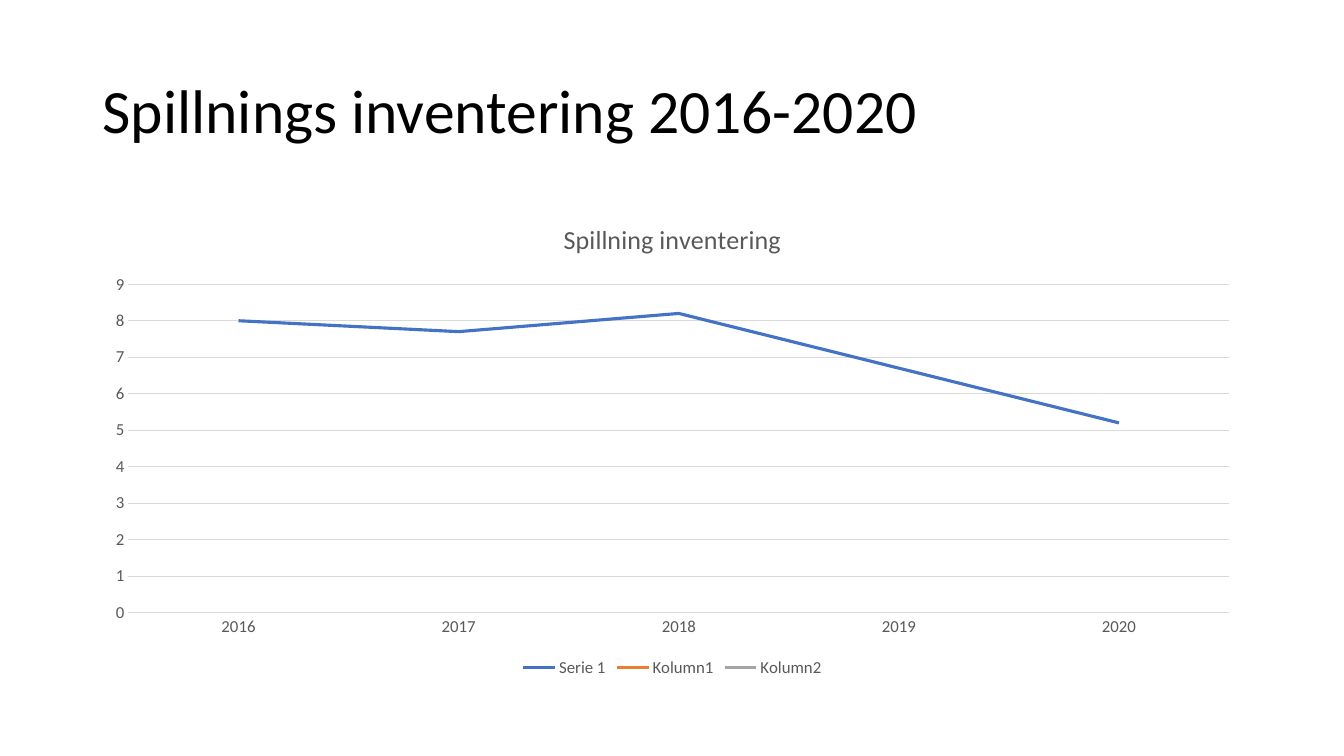
from pptx import Presentation
from pptx.chart.data import CategoryChartData
from pptx.dml.color import RGBColor
from pptx.enum.chart import XL_CHART_TYPE, XL_LEGEND_POSITION, XL_MARKER_STYLE, XL_TICK_MARK
from pptx.enum.text import MSO_ANCHOR
from pptx.util import Inches, Pt

LINE = XL_CHART_TYPE.LINE
BOTTOM = XL_LEGEND_POSITION.BOTTOM
NO_MARKER = XL_MARKER_STYLE.NONE
NO_TICK = XL_TICK_MARK.NONE
MIDDLE = MSO_ANCHOR.MIDDLE

FONT = "Calibri"
BLACK, GREY, GRID = "000000", "595959", "D9D9D9"
LEFT, WIDTH = 0.92, 11.5

YEARS = ["2016", "2017", "2018", "2019", "2020"]
SERIES = [
    ("Serie 1", [8, 7.7, 8.2, 6.7, 5.2], "4472C4"),
    ("Kolumn1", [None] * len(YEARS), "ED7D31"),
    ("Kolumn2", [None] * len(YEARS), "A5A5A5"),
]


def rgb(color):
    return RGBColor.from_string(color)


def style_font(font, size, color):
    for name, value in {"name": FONT, "size": Pt(size), "bold": False}.items():
        setattr(font, name, value)
    font.color.rgb = rgb(color)


def style_line(line, width, color):
    line.width = Pt(width)
    line.color.rgb = rgb(color)


def add_title(s, text, top, height):
    sp = s.shapes.add_textbox(Inches(LEFT), Inches(top), Inches(WIDTH), Inches(height))
    tf = sp.text_frame
    for name, value in {"word_wrap": True, "vertical_anchor": MIDDLE}.items():
        setattr(tf, name, value)
    p = tf.paragraphs[0]
    p.line_spacing = 0.9
    r = p.add_run()
    r.text = text
    style_font(r.font, 44, BLACK)


def style_axis(axis):
    for name, value in {"major_tick_mark": NO_TICK, "minor_tick_mark": NO_TICK}.items():
        setattr(axis, name, value)
    style_font(axis.tick_labels.font, 12, GREY)


def add_line_chart(s, title, top, height):
    data = CategoryChartData()
    data.categories = YEARS
    for name, values, _ in SERIES:
        data.add_series(name, values)
    chart = s.shapes.add_chart(LINE, Inches(LEFT), Inches(top), Inches(WIDTH),
                               Inches(height), data).chart
    style_font(chart.font, 10, BLACK)

    # Chart title
    chart.has_title = True
    p = chart.chart_title.text_frame.paragraphs[0]
    r = p.add_run()
    r.text = title
    style_font(r.font, 18.6, GREY)
    chart.chart_title.include_in_layout = False

    # Legend
    chart.has_legend = True
    chart.legend.position = BOTTOM
    chart.legend.include_in_layout = False
    style_font(chart.legend.font, 12, GREY)

    # Axes and gridlines
    years, counts = chart.category_axis, chart.value_axis
    for axis in (years, counts):
        style_axis(axis)
    style_line(years.format.line, 0.75, GRID)
    counts.format.line.fill.background()
    counts.has_major_gridlines = True
    style_line(counts.major_gridlines.format.line, 0.75, GRID)
    for name, value in {"minimum_scale": 0, "maximum_scale": 9, "major_unit": 1}.items():
        setattr(counts, name, value)

    # Series lines
    chart.plots[0].vary_by_categories = False
    for series, (_, _, color) in zip(chart.plots[0].series, SERIES):
        series.smooth = False
        series.marker.style = NO_MARKER
        style_line(series.format.line, 2.25, color)


def main():
    prs = Presentation()
    prs.slide_width, prs.slide_height = Inches(13.33), Inches(7.5)
    s = prs.slides.add_slide(prs.slide_layouts[6])
    add_title(s, "Spillnings inventering 2016-2020", 0.4, 1.45)
    add_line_chart(s, "Spillning inventering", 2, 4.76)
    prs.save("out.pptx")


if __name__ == "__main__":
    main()
